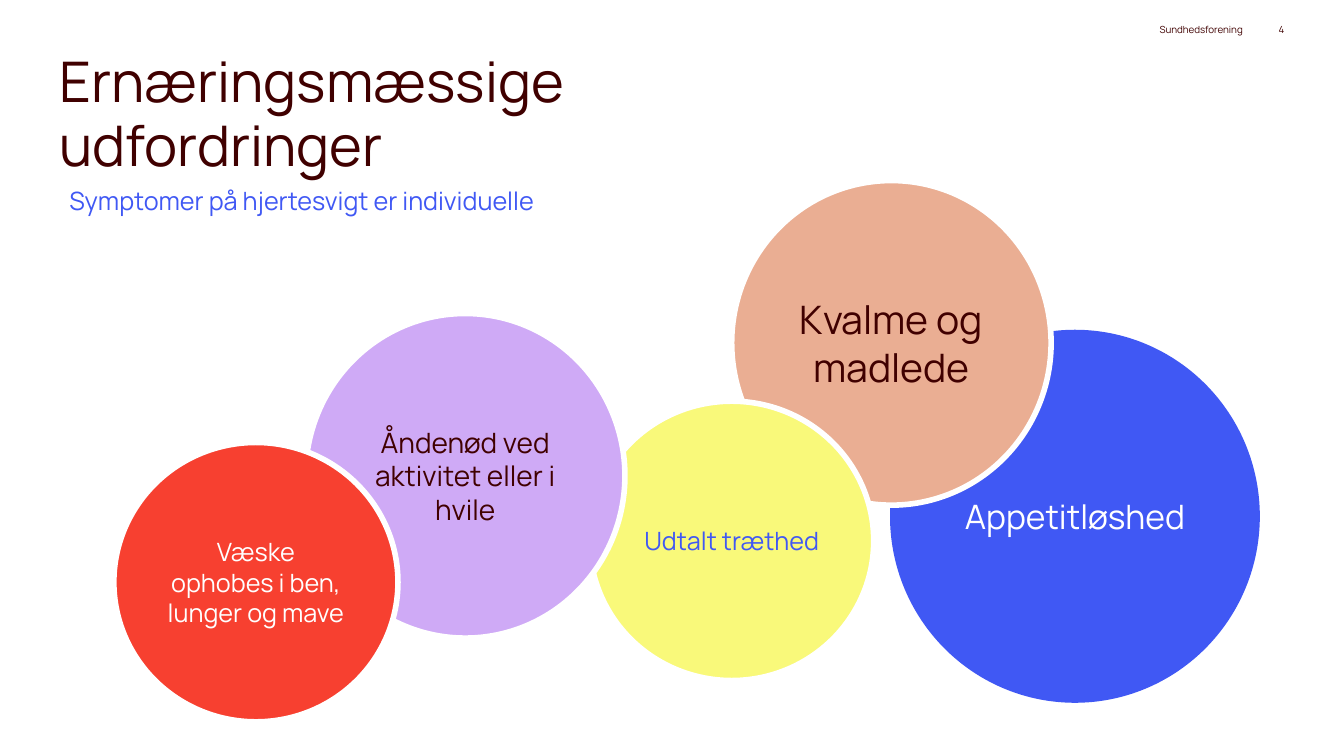
from pptx import Presentation
from pptx.dml.color import RGBColor
from pptx.enum.shapes import MSO_SHAPE
from pptx.enum.text import MSO_ANCHOR, PP_ALIGN
from pptx.util import Cm, Pt

COLORS = {
    "maroon": "400000",
    "blue": "4058F4",
    "peach": "EAAE93",
    "yellow": "F9F97A",
    "lilac": "CFAAF6",
    "red": "F74030",
    "white": "FFFFFF",
}
LARGE = (8.05, 8.18)
SMALL = (7.16, 7.04)
SYMPTOMS = [
    ("Appetitløshed", (22.43, 8.31), (9.32, 9.4), "blue", "white", 24, False),
    ("Kvalme og madlede", (18.44, 4.55), LARGE, "peach", "maroon", 28, True),
    ("Udtalt træthed", (14.86, 10.11), SMALL, "yellow", "blue", 18, True),
    ("Åndenød ved aktivitet eller i hvile", (7.7, 7.9), LARGE, "lilac", "maroon", 20, True),
    ("Væske ophobes i ben, lunger og mave", (2.87, 11.15), SMALL, "red", "white", 18, True),
]


class SymptomSlide:
    font = "Manrope"
    outline = Pt(4)

    def __init__(self, deck):
        self.slide = deck.slides.add_slide(deck.slide_layouts[6])
        self.cluster = self.slide.shapes.add_group_shape()

    def color(self, name):
        return RGBColor.from_string(COLORS[name])

    def label(self, shape, words, size, color, insets, anchor, paragraph_format):
        frame = shape.text_frame
        frame_format = {
            "word_wrap": True,
            "vertical_anchor": anchor,
            "margin_left": Cm(insets[0]),
            "margin_right": Cm(insets[0]),
            "margin_top": Cm(insets[1]),
            "margin_bottom": Cm(insets[1]),
        }
        paragraph = frame.paragraphs[0]
        run = paragraph.add_run()
        run.text = words
        run.font.color.rgb = self.color(color)
        font_format = {"name": self.font, "size": Pt(size)}
        for target, values in (
            (frame, frame_format),
            (paragraph, paragraph_format),
            (run.font, font_format),
        ):
            for attribute, value in values.items():
                setattr(target, attribute, value)

    def text(self, words, place, size, color="maroon", insets=(0, 0),
             anchor=MSO_ANCHOR.TOP, **paragraph_format):
        box = self.slide.shapes.add_textbox(*map(Cm, place))
        self.label(box, words, size, color, insets, anchor, paragraph_format)

    def circle(self, words, corner, extent, fill, color, size, outlined):
        disc = self.cluster.shapes.add_shape(MSO_SHAPE.OVAL, *map(Cm, corner + extent))
        disc.shadow.inherit = False
        disc.fill.solid()
        disc.fill.fore_color.rgb = self.color(fill)
        if outlined:
            disc.line.color.rgb = self.color("white")
            disc.line.width = self.outline
        else:
            disc.line.fill.background()
        self.label(disc, words, size, color, (0.2, 0.1), MSO_ANCHOR.MIDDLE,
                   {"alignment": PP_ALIGN.CENTER})


def main():
    deck = Presentation()
    deck.slide_width, deck.slide_height = Cm(33.87), Cm(19.05)
    page = SymptomSlide(deck)
    page.text("Ernæringsmæssige udfordringer", (1.5, 1.3, 15.14, 3.25), 40,
              line_spacing=0.95)
    header = {"size": 7, "anchor": MSO_ANCHOR.MIDDLE, "alignment": PP_ALIGN.RIGHT}
    page.text("Sundhedsforening", (17.2, 0.5, 14.12, 0.5), **header)
    page.text("4", (31.37, 0.5, 1, 0.5), **header)
    page.text("Symptomer på hjertesvigt er individuelle", (1.5, 4.55, 16.56, 1.37), 18,
              "blue", (0.25, 0.13), space_after=Pt(6))
    for symptom in SYMPTOMS:
        page.circle(*symptom)
    deck.save("out.pptx")


if __name__ == "__main__":
    main()
